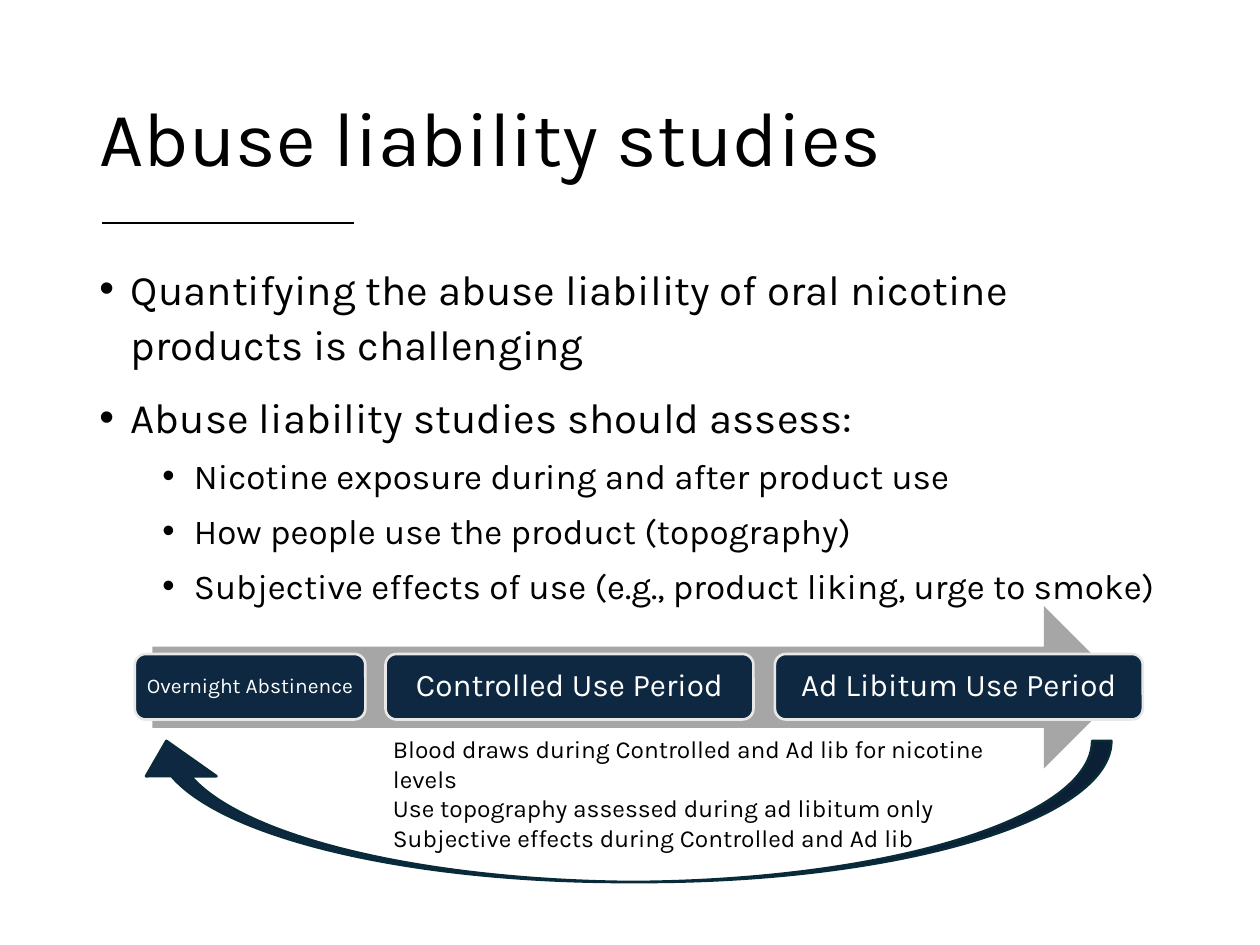
from lxml import etree
from pptx import Presentation
from pptx.dml.color import RGBColor
from pptx.enum.shapes import MSO_CONNECTOR, MSO_SHAPE
from pptx.enum.text import MSO_ANCHOR, PP_ALIGN
from pptx.oxml.ns import qn
from pptx.util import Inches, Pt

FONT = "Karla"
BLACK = RGBColor(0x00, 0x00, 0x00)
WHITE = RGBColor(0xFF, 0xFF, 0xFF)
GREY = RGBColor(0xA6, 0xA6, 0xA6)
PALE = RGBColor(0xE8, 0xE8, 0xE8)
NAVY = RGBColor(0x0E, 0x28, 0x41)
TEAL = RGBColor(0x09, 0x2A, 0x39)

TITLE = "Abuse liability studies"
POINTS = [
    ("Quantifying the abuse liability of oral nicotine products is challenging", 0),
    ("Abuse liability studies should assess:", 0),
    ("Nicotine exposure during and after product use", 1),
    ("How people use the product (topography)", 1),
    ("Subjective effects of use (e.g., product liking, urge to smoke)", 1),
]
POINT_SIZES = [24, 20]
POINT_GAPS = [10, 5]
POINT_INDENTS = [0.25, 0.75]
MEASURES = [
    "Blood draws during Controlled and Ad lib for nicotine levels",
    "Use topography assessed during ad libitum only",
    "Subjective effects during Controlled and Ad lib",
]
PERIODS = [
    ("Overnight Abstinence", 1.07, 1.83, 12, 0.05),
    ("Controlled Use Period", 3.06, 2.92, 18, 0.07),
    ("Ad Libitum Use Period", 6.15, 2.92, 18, 0.07),
]


def write(paragraph, text, size, color=BLACK, align=PP_ALIGN.LEFT, spacing=1.0, before=0):
    paragraph.text = text
    paragraph.alignment = align
    paragraph.line_spacing = spacing
    paragraph.space_before = Pt(before)
    paragraph.font.name = FONT
    paragraph.font.size = Pt(size)
    paragraph.font.color.rgb = color


def add_bullet(paragraph, indent):
    properties = paragraph._p.get_or_add_pPr()
    properties.set("marL", str(Inches(indent)))
    properties.set("indent", str(Inches(-0.25)))
    etree.SubElement(properties, qn("a:buFont")).set("typeface", "Arial")
    etree.SubElement(properties, qn("a:buChar")).set("char", "•")


def add_frame(slide, left, top, width, height, anchor=MSO_ANCHOR.TOP):
    box = slide.shapes.add_textbox(Inches(left), Inches(top), Inches(width), Inches(height))
    frame = box.text_frame
    frame.word_wrap = True
    frame.vertical_anchor = anchor
    return frame


def next_paragraph(frame, index):
    return frame.add_paragraph() if index else frame.paragraphs[0]


def add_filled(slide, kind, left, top, width, height, fill, line=None):
    shape = slide.shapes.add_shape(kind, Inches(left), Inches(top), Inches(width), Inches(height))
    shape.shadow.inherit = False
    shape.fill.solid()
    shape.fill.fore_color.rgb = fill
    if line is None:
        shape.line.fill.background()
    else:
        shape.line.color.rgb = line
        shape.line.width = Pt(1.5)
    return shape


def add_title(slide):
    rule = slide.shapes.add_connector(
        MSO_CONNECTOR.STRAIGHT, Inches(0.81), Inches(1.77), Inches(2.81), Inches(1.77))
    rule.line.color.rgb = BLACK
    rule.line.width = Pt(1.5)
    etree.SubElement(rule._element.spPr, qn("a:effectLst"))
    frame = add_frame(slide, 0.69, 0.4, 8.62, 1.45, anchor=MSO_ANCHOR.MIDDLE)
    write(frame.paragraphs[0], TITLE, 44, spacing=0.9)


def add_points(slide):
    frame = add_frame(slide, 0.69, 2, 8.62, 2.81)
    for index, (text, level) in enumerate(POINTS):
        paragraph = next_paragraph(frame, index)
        paragraph.level = level
        add_bullet(paragraph, POINT_INDENTS[level])
        write(paragraph, text, POINT_SIZES[level], spacing=1.1,
              before=POINT_GAPS[level] if index else 0)


def add_measures(slide):
    frame = add_frame(slide, 3.02, 5.78, 5.21, 0.81)
    for index, text in enumerate(MEASURES):
        write(next_paragraph(frame, index), text, 14)


def add_period(slide, name, left, width, size, inset):
    period = add_filled(slide, MSO_SHAPE.ROUNDED_RECTANGLE, left, 5.19, width, 0.52, NAVY, PALE)
    frame = period.text_frame
    frame.word_wrap = True
    frame.vertical_anchor = MSO_ANCHOR.MIDDLE
    frame.margin_left = frame.margin_right = Inches(inset)
    frame.margin_top = frame.margin_bottom = Inches(inset)
    write(frame.paragraphs[0], name, size, color=WHITE, align=PP_ALIGN.CENTER, spacing=0.9)


def add_return_arrow(slide):
    arrow = add_filled(slide, MSO_SHAPE.CURVED_DOWN_ARROW, 1.04, 5.88, 7.78, 1.12, NAVY, TEAL)
    arrow.rotation = 180
    for index, value in enumerate([0.136, 0.5, 0.25]):
        arrow.adjustments[index] = value


def main():
    deck = Presentation()
    deck.slide_width, deck.slide_height = Inches(10), Inches(7.5)
    slide = deck.slides.add_slide(deck.slide_layouts[6])
    add_title(slide)
    add_points(slide)
    add_measures(slide)
    add_filled(slide, MSO_SHAPE.RIGHT_ARROW, 1.21, 4.81, 7.72, 1.29, GREY)
    for period in PERIODS:
        add_period(slide, *period)
    add_return_arrow(slide)
    deck.save("out.pptx")


if __name__ == "__main__":
    main()
